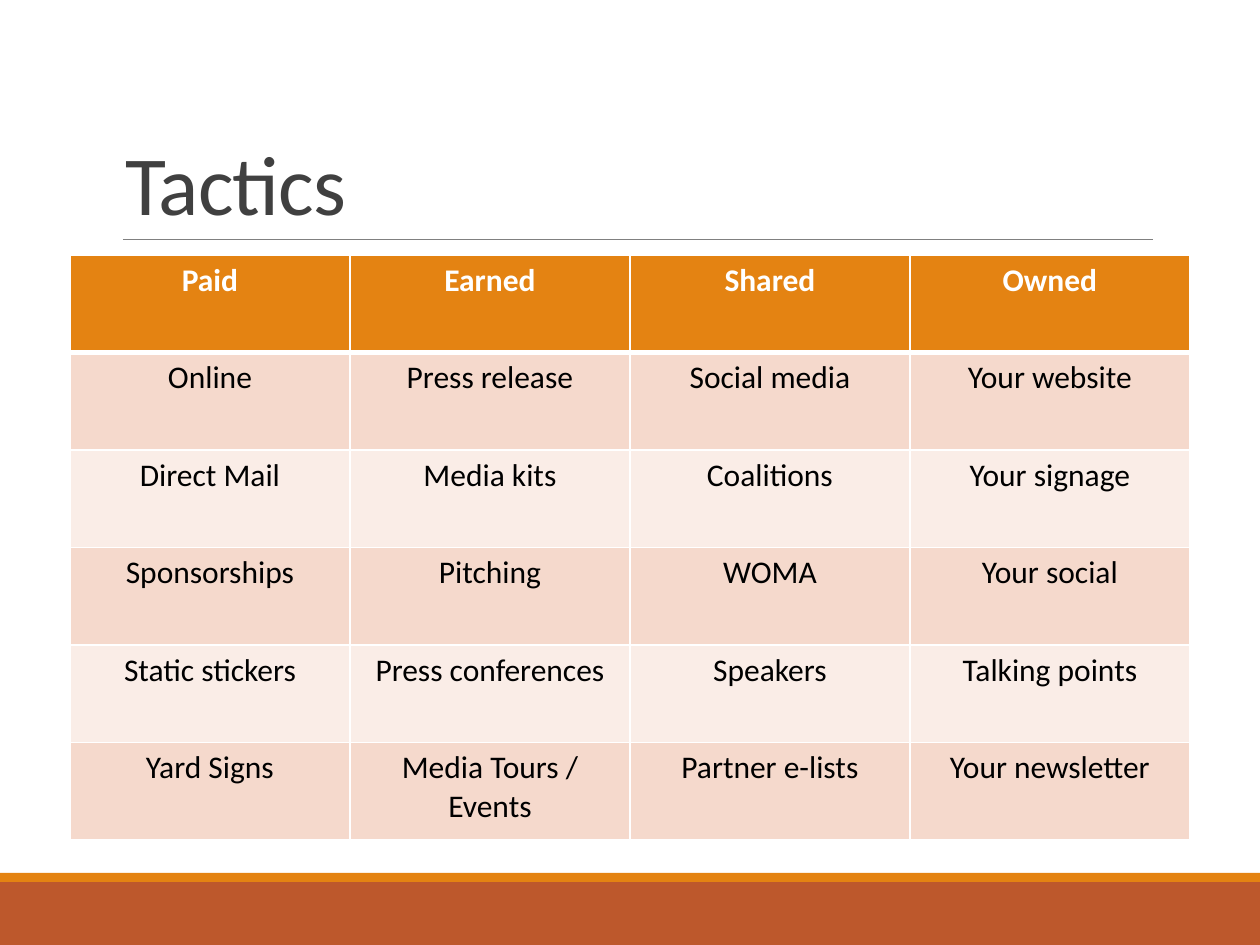
import pptx
import pptx.util
import pptx.dml.color
import pptx.enum.shapes
import pptx.enum.text
import pptx.oxml.ns
import lxml.etree

PX = 914400 // 126
SLIDE_W, SLIDE_H = 1260, 945
FONT = "Calibri"
COLORS = {
    "orange": "E48312",
    "rust": "BD582C",
    "rule": "808080",
    "title": "404040",
    "white": "FFFFFF",
    "black": "000000",
    "band_dark": "F5D9CC",
    "band_light": "FAEDE7",
}
TACTICS = [
    ["Paid", "Earned", "Shared", "Owned"],
    ["Online", "Press release", "Social media", "Your website"],
    ["Direct Mail", "Media kits", "Coalitions", "Your signage"],
    ["Sponsorships", "Pitching", "WOMA", "Your social"],
    ["Static stickers", "Press conferences", "Speakers", "Talking points"],
    ["Yard Signs", "Media Tours / Events", "Partner e-lists", "Your newsletter"],
]


def px(*lengths):
    return [pptx.util.Emu(length * PX) for length in lengths]


def rgb(name):
    return pptx.dml.color.RGBColor.from_string(COLORS[name])


def set_font(paragraph, size, color, bold=False):
    font = paragraph.font
    font.name = FONT
    font.size = pptx.util.Pt(size)
    font.bold = bold
    font.color.rgb = rgb(color)


def add_sub(parent, tag, **attributes):
    return lxml.etree.SubElement(parent, pptx.oxml.ns.qn(tag), attributes)


def add_band(slide, top, height, color):
    band = slide.shapes.add_shape(
        pptx.enum.shapes.MSO_SHAPE.RECTANGLE, *px(0, top, SLIDE_W, height))
    band.shadow.inherit = False
    band.fill.solid()
    band.fill.fore_color.rgb = rgb(color)
    band.line.fill.background()


def add_rule(slide, left, right, y):
    rule = slide.shapes.add_connector(
        pptx.enum.shapes.MSO_CONNECTOR.STRAIGHT, *px(left, y, right, y))
    rule.line.color.rgb = rgb("rule")
    rule.line.width = pptx.util.Pt(0.5)
    add_sub(rule._element.spPr, "a:effectLst")


def add_title(slide, text):
    title = slide.shapes.add_textbox(*px(113, 39, 1040, 200)).text_frame
    title.word_wrap = True
    title.vertical_anchor = pptx.enum.text.MSO_ANCHOR.BOTTOM
    heading = title.paragraphs[0]
    heading.line_spacing = 0.85
    set_font(heading, 48, "title")
    run = heading.add_run()
    run.text = text
    run._r.get_or_add_rPr().set("spc", "-50")


def add_border(cell, side, width):
    border = add_sub(cell._tc.get_or_add_tcPr(), f"a:ln{side}",
                     w=str(pptx.util.Pt(width)))
    add_sub(add_sub(border, "a:solidFill"), "a:srgbClr", val=COLORS["white"])


def fill_cell(cell, text, row):
    is_header = row == 0
    widths = {"L": 1, "R": 1, "T": 3 if row == 1 else 1, "B": 3 if is_header else 1}
    for side, width in widths.items():
        add_border(cell, side, width)
    band = "band_dark" if row % 2 else "band_light"
    cell.fill.solid()
    cell.fill.fore_color.rgb = rgb("orange" if is_header else band)
    cell.text = text
    label = cell.text_frame.paragraphs[0]
    label.alignment = pptx.enum.text.PP_ALIGN.CENTER
    set_font(label, 18, "white" if is_header else "black", is_header)


def add_tactics_table(slide, left, top, width, height):
    row_count, column_count = len(TACTICS), len(TACTICS[0])
    table = slide.shapes.add_table(
        row_count, column_count, *px(left, top, width, height)).table
    for row, labels in enumerate(TACTICS):
        for column, label in enumerate(labels):
            fill_cell(table.cell(row, column), label, row)


def main():
    deck = pptx.Presentation()
    deck.slide_width, deck.slide_height = px(SLIDE_W, SLIDE_H)
    slide = deck.slides.add_slide(deck.slide_layouts[6])
    add_band(slide, 882, 63, "rust")
    add_band(slide, 873, 9, "orange")
    add_rule(slide, 123, 1153, 239)
    add_title(slide, "Tactics")
    add_tactics_table(slide, 70, 255, 1120, 585)
    deck.save("out.pptx")


if __name__ == "__main__":
    main()
